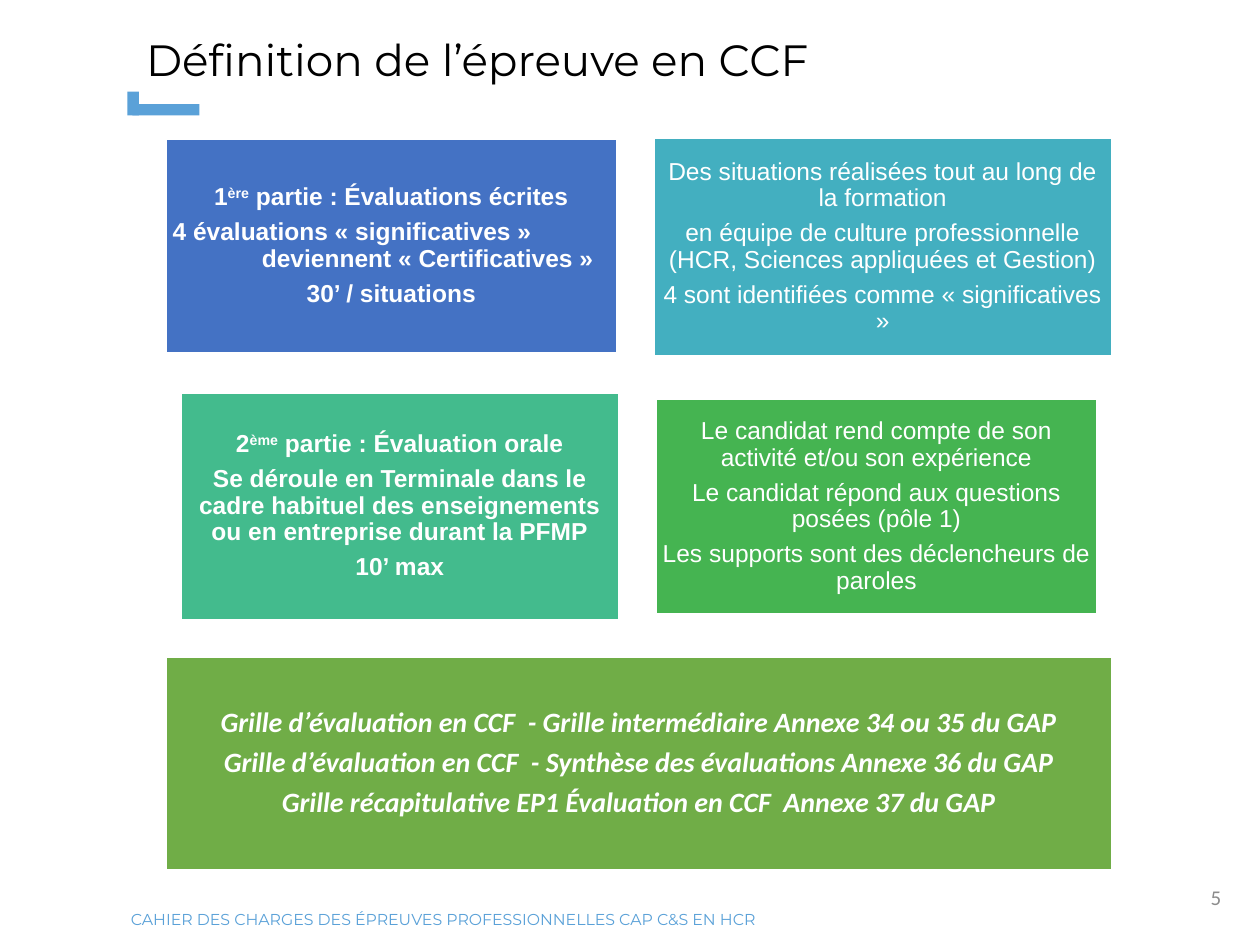
from pptx import Presentation
from pptx.dml.color import RGBColor
from pptx.enum.shapes import MSO_SHAPE as SHAPE
from pptx.enum.text import MSO_ANCHOR as ANCHOR, PP_ALIGN as ALIGN
from pptx.util import Cm, Pt

COLORS = {
    "black": "000000", "white": "FFFFFF", "grey": "8C8C8C", "accent": "5AA1D8",
    "blue": "4472C4", "teal": "43AFC0", "mint": "43BB8D",
    "green": "45B451", "olive": "70AD47",
}
SUPERSCRIPTS = ("ère", "ème")


class Deck:
    def __init__(self, prs):
        self.prs = prs
        self.s = None

    def new_slide(self):
        self.s = self.prs.slides.add_slide(self.prs.slide_layouts[5])

    def color(self, name):
        return RGBColor.from_string(COLORS[name])

    def place(self, sp, box):
        sp.left, sp.top, sp.width, sp.height = (Cm(v) for v in box)

    def run(self, p, text, font, size, color, bold=False, italic=False):
        r = p.add_run()
        r.text = text
        f = r.font
        f.name, f.size, f.bold, f.italic = font, Pt(size), bold, italic
        f.color.rgb = self.color(color)
        return r

    def title(self, text, box):
        sp = self.s.shapes.title
        self.place(sp, box)
        tf = sp.text_frame
        tf.vertical_anchor = ANCHOR.TOP
        p = tf.paragraphs[0]
        p.alignment, p.line_spacing = ALIGN.LEFT, 0.9
        self.run(p, text, "Montserrat", 25, "black")

    def label(self, text, box, font, size, color, align=ALIGN.LEFT):
        sp = self.s.shapes.add_textbox(*(Cm(v) for v in box))
        tf = sp.text_frame
        tf.word_wrap, tf.vertical_anchor = True, ANCHOR.MIDDLE
        p = tf.paragraphs[0]
        p.alignment = align
        self.run(p, text, font, size, color)

    def rect(self, box, fill):
        sp = self.s.shapes.add_shape(SHAPE.RECTANGLE, *(Cm(v) for v in box))
        sp.shadow.inherit = False
        sp.fill.solid()
        sp.fill.fore_color.rgb = self.color(fill)
        sp.line.fill.background()
        return sp

    def card(self, box, fill, paragraphs, font="Arial", size=14, inset=0.15,
             bold=False, italic=False, hanging=None):
        """Filled box of centred paragraphs, each a list of runs.

        hanging: index of a paragraph set left with a hanging indent.
        """
        sp = self.rect(box, fill)
        sp.line.color.rgb = self.color("white")
        sp.line.width = Pt(2)
        tf = sp.text_frame
        tf.word_wrap, tf.vertical_anchor = True, ANCHOR.MIDDLE
        tf.margin_left = tf.margin_right = Cm(inset)
        tf.margin_top = tf.margin_bottom = Cm(inset)
        for i, runs in enumerate(paragraphs):
            p = tf.add_paragraph() if i else tf.paragraphs[0]
            p.alignment, p.line_spacing = ALIGN.CENTER, 0.9
            p.space_after = Pt(round(size * 0.35, 1))
            if i == hanging:
                p.alignment = ALIGN.LEFT
                pPr = p._p.get_or_add_pPr()
                pPr.set("marL", str(Cm(1.8)))
                pPr.set("indent", str(-Cm(1.8)))
            for text in runs:
                r = self.run(p, text, font, size, "white", bold, italic)
                if text in SUPERSCRIPTS:
                    r._r.get_or_add_rPr().set("baseline", "30000")


def main():
    prs = Presentation()
    prs.slide_width, prs.slide_height = Cm(25.4), Cm(19.05)
    deck = Deck(prs)
    deck.new_slide()

    deck.title("Définition de l’épreuve en CCF", (2.69, 0.66, 21.9, 2.36))
    deck.rect((2.57, 1.85, 0.23, 0.48), "accent")
    deck.rect((2.67, 2.1, 1.35, 0.23), "accent")
    deck.label("5", (19.15, 17.58, 5.72, 1.02), "Calibri", 12, "grey", ALIGN.RIGHT)

    deck.card((3.33, 2.79, 9.12, 4.34), "blue", [
        ["1", "ère", " partie : Évaluations écrites"],
        ["4 évaluations « significatives » deviennent « Certificatives »"],
        ["30’ / situations"],
    ], bold=True, hanging=1)
    deck.card((13.16, 2.77, 9.27, 4.42), "teal", [
        ["Des situations réalisées tout au long de la formation"],
        ["en équipe de culture professionnelle (HCR, Sciences appliquées et Gestion)"],
        ["4 sont identifiées comme « significatives »"],
    ])
    deck.card((3.63, 7.9, 8.86, 4.62), "mint", [
        ["2", "ème", " partie : Évaluation orale"],
        ["Se déroule en Terminale dans le cadre habituel des enseignements "
         "ou en entreprise durant la PFMP"],
        ["10’ max"],
    ], bold=True)
    deck.card((13.21, 8.03, 8.92, 4.37), "green", [
        ["Le candidat rend compte de son activité et/ou son expérience"],
        ["Le candidat répond aux questions posées (pôle 1)"],
        ["Les supports sont des déclencheurs de paroles"],
    ])
    deck.card((3.33, 13.23, 19.1, 4.32), "olive", [
        ["Grille d’évaluation en CCF  - Grille intermédiaire Annexe 34 ou 35 du GAP"],
        ["Grille d’évaluation en CCF  - Synthèse des évaluations Annexe 36 du GAP"],
        ["Grille récapitulative EP1 Évaluation en CCF  Annexe 37 du GAP"],
    ], font="Calibri", size=16, inset=0.18, bold=True, italic=True)

    deck.label("CAHIER DES CHARGES DES ÉPREUVES PROFESSIONNELLES CAP C&S EN HCR",
               (2.39, 18.03, 15.67, 1.02), "Montserrat", 9, "accent")
    prs.save("out.pptx")


if __name__ == "__main__":
    main()
